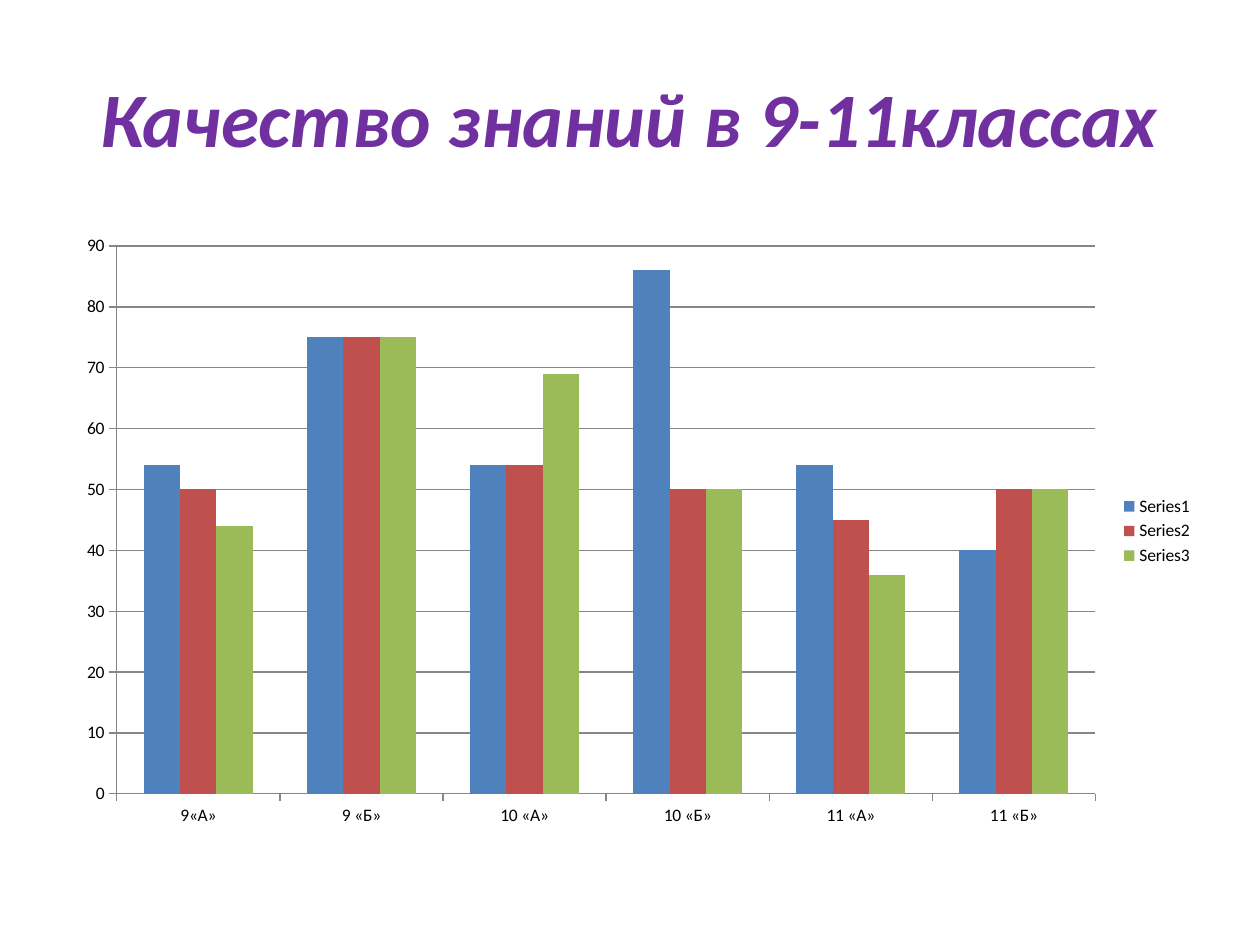
import pptx
import pptx.chart.data
import pptx.dml.color
import pptx.enum.chart
import pptx.enum.text
import pptx.util
from dataclasses import dataclass

chart_enum = pptx.enum.chart
text_enum = pptx.enum.text


@dataclass(frozen=True)
class Theme:
    font: str = "Calibri"
    title_size: int = 44
    chart_size: int = 10
    title_color: str = "7030A0"
    text_color: str = "000000"
    line_color: str = "868686"
    series_colors: tuple = ("4F81BD", "C0504D", "9BBB59")


THEME = Theme()
WIDTH, HEIGHT = pptx.util.Inches(10), pptx.util.Inches(7.5)

CLASSES = ("9«А»", "9 «Б»", "10 «А»", "10 «Б»", "11 «А»", "11 «Б»")
QUALITY = {
    "Series1": (54, 75, 54, 86, 54, 40),
    "Series2": (50, 75, 54, 50, 45, 50),
    "Series3": (44, 75, 69, 50, 36, 50),
}


def set_values(target, values):
    for name, value in values.items():
        setattr(target, name, value)


def color(code):
    return pptx.dml.color.RGBColor.from_string(code)


def box(left, top, width, height):
    """Turn shares of the slide's size into lengths."""
    return (int(left * WIDTH), int(top * HEIGHT),
            int(width * WIDTH), int(height * HEIGHT))


def style_font(font, size, code, **extra):
    set_values(font, {"name": THEME.font, "size": pptx.util.Pt(size), **extra})
    font.color.rgb = color(code)


def style_line(line):
    line.color.rgb = color(THEME.line_color)
    line.width = pptx.util.Pt(0.75)


def add_title(slide, text, area):
    frame = slide.shapes.add_textbox(*area).text_frame
    set_values(frame, {"word_wrap": True,
                       "vertical_anchor": text_enum.MSO_ANCHOR.MIDDLE})
    paragraph = frame.paragraphs[0]
    paragraph.alignment = text_enum.PP_ALIGN.CENTER
    run = paragraph.add_run()
    run.text = text
    style_font(run.font, THEME.title_size, THEME.title_color,
               bold=True, italic=True)


def style_axis(axis, values):
    set_values(axis, {"major_tick_mark": chart_enum.XL_TICK_MARK.OUTSIDE,
                      "minor_tick_mark": chart_enum.XL_TICK_MARK.NONE,
                      **values})
    style_line(axis.format.line)


def add_column_chart(slide, categories, series_values, area):
    data = pptx.chart.data.CategoryChartData(number_format="General")
    data.categories = categories
    for name, values in series_values.items():
        data.add_series(name, values)
    chart = slide.shapes.add_chart(
        chart_enum.XL_CHART_TYPE.COLUMN_CLUSTERED, *area, data).chart
    set_values(chart, {"has_title": False, "has_legend": True})
    style_font(chart.font, THEME.chart_size, THEME.text_color)
    set_values(chart.legend, {
        "position": chart_enum.XL_LEGEND_POSITION.RIGHT,
        "include_in_layout": False})

    # Columns
    plot = chart.plots[0]
    set_values(plot, {"gap_width": 150, "overlap": 0,
                      "vary_by_categories": False})
    for series, code in zip(plot.series, THEME.series_colors):
        series.format.fill.solid()
        series.format.fill.fore_color.rgb = color(code)

    # Axes and gridlines
    style_axis(chart.category_axis, {"has_major_gridlines": False})
    style_axis(chart.value_axis, {
        "has_major_gridlines": True, "minimum_scale": 0,
        "maximum_scale": 90, "major_unit": 10})
    style_line(chart.value_axis.major_gridlines.format.line)


def main():
    presentation = pptx.Presentation()
    set_values(presentation, {"slide_width": WIDTH, "slide_height": HEIGHT})
    slide = presentation.slides.add_slide(presentation.slide_layouts[6])

    # Heading
    add_title(slide, "Качество знаний в 9-11классах",
              box(0.05, 0.04, 0.9, 1 / 6))

    # Quality of knowledge by class
    add_column_chart(slide, CLASSES, QUALITY,
                     box(0.051, 0.237, 0.906, 0.65))

    presentation.save("out.pptx")


if __name__ == "__main__":
    main()
